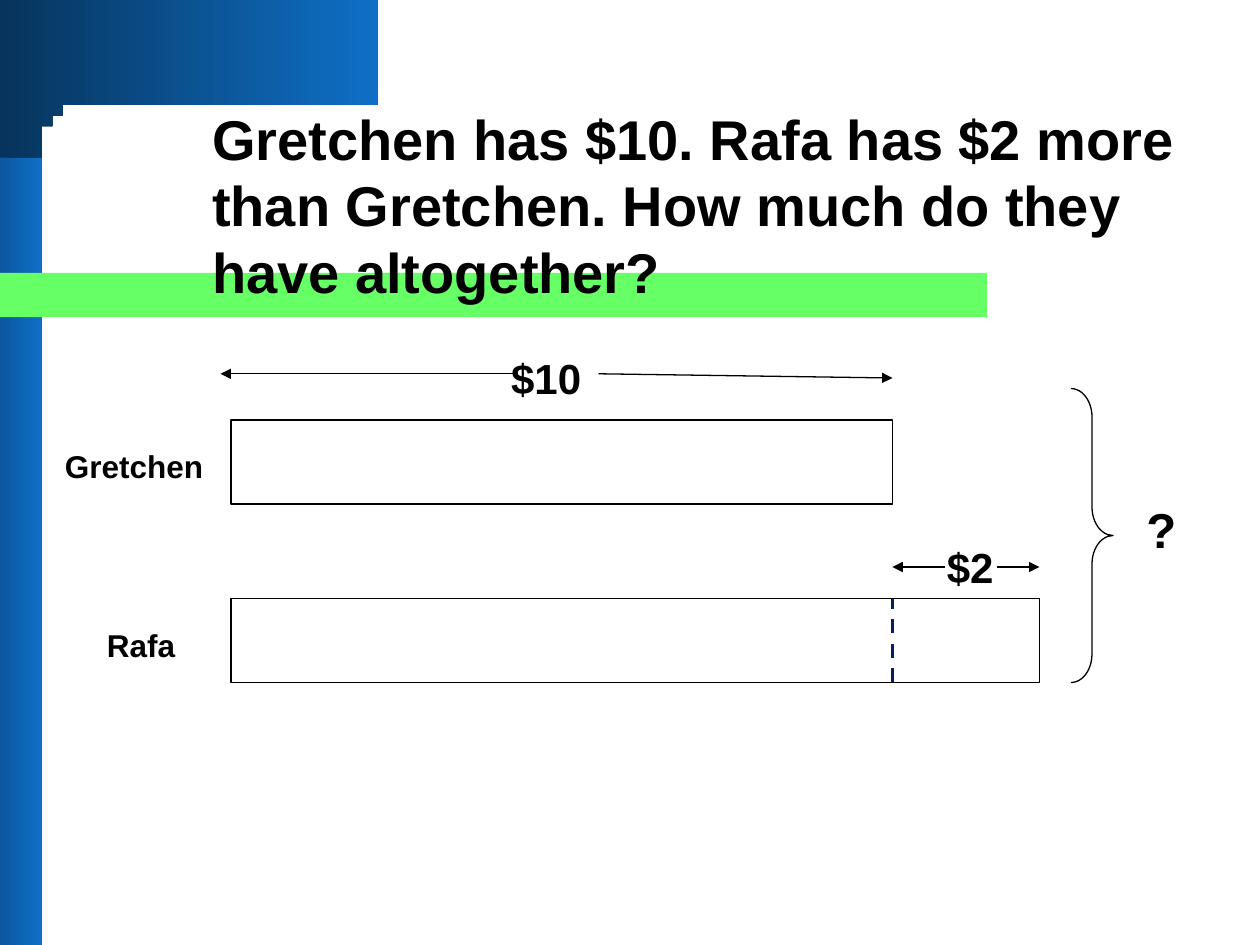
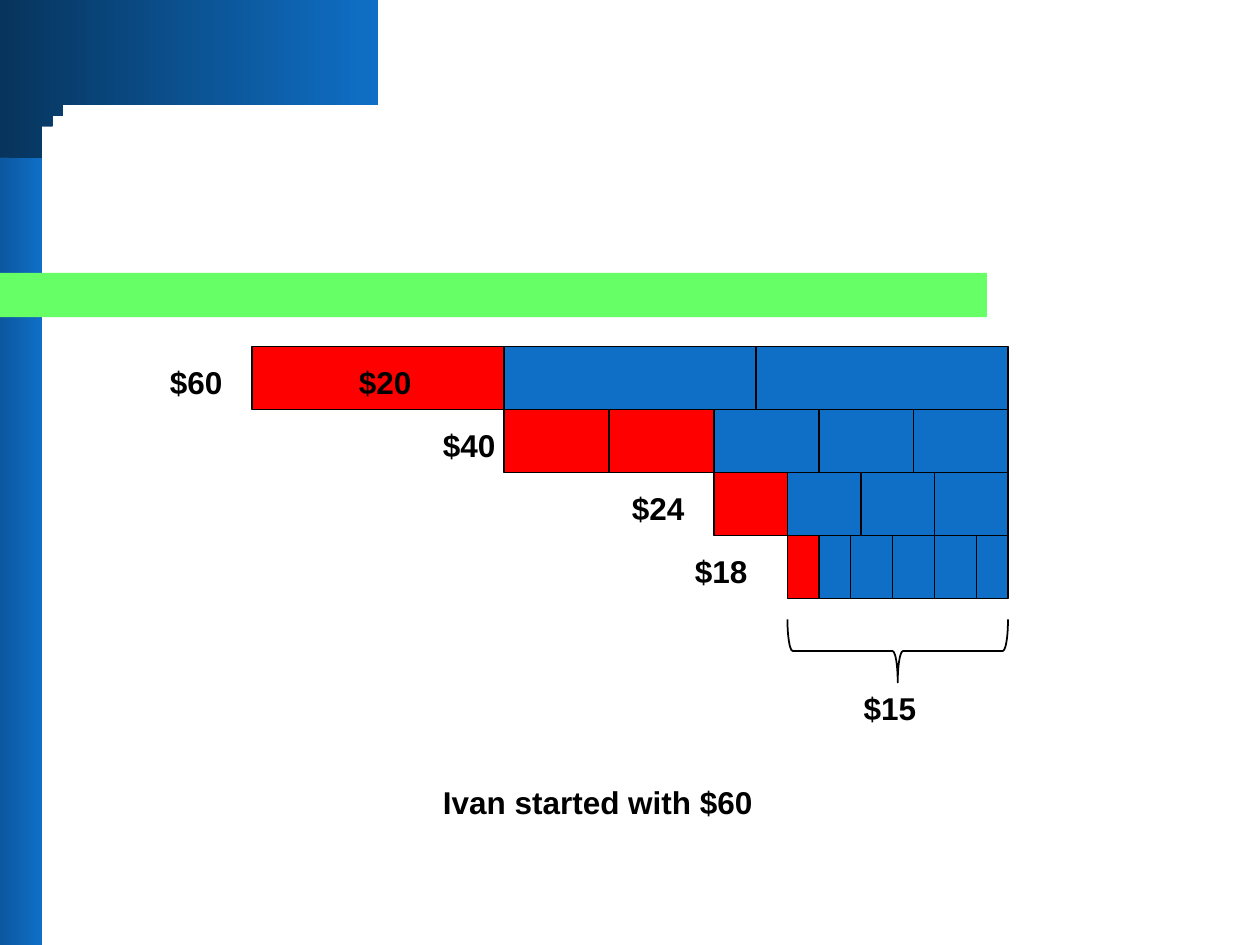
from math import cos, pi, sin

from lxml.etree import SubElement
from pptx import Presentation
from pptx.dml.color import RGBColor
from pptx.enum.dml import MSO_LINE_DASH_STYLE as Dash
from pptx.enum.shapes import MSO_CONNECTOR as Connector, MSO_SHAPE as Shape
from pptx.enum.text import MSO_ANCHOR as Anchor, PP_ALIGN as Align
from pptx.oxml.ns import qn
from pptx.util import Inches, Pt

# Grid of 120 columns by 90 rows, twelve cells to the inch
CELL = Inches(1) // 12
color = RGBColor.from_string
BLACK, BLUE, DARK_BLUE, STRIP_BLUE = "000000", "0F6FC6", "07345C", "0C57A0"
GREEN, RED, NAVY = "66FF66", "FF0000", "002060"

presentation = Presentation()
presentation.slide_width = 120 * CELL
presentation.slide_height = 90 * CELL


def add_box(slide, kind, *place, fill=None, line=BLACK, weight=0.75):
    """Add a preset shape; place is left, top, width, height in cells."""
    shape = slide.shapes.add_shape(kind, *[round(n * CELL) for n in place])
    shape.shadow.inherit = False
    if fill:
        shape.fill.solid()
        shape.fill.fore_color.rgb = color(fill)
    else:
        shape.fill.background()
    if line:
        shape.line.color.rgb = color(line)
        shape.line.width = Pt(weight)
    else:
        shape.line.fill.background()
    return shape


def add_text(slide, text, *place, size=18, align=Align.LEFT, box=None):
    """Write bold text in a new text box, or in the given box, placed in cells."""
    box = box or slide.shapes.add_textbox(0, 0, 0, 0)
    box.left, box.top, box.width, box.height = [round(n * CELL) for n in place]
    frame = box.text_frame
    frame.word_wrap = True
    paragraph = frame.paragraphs[0]
    paragraph.alignment = align
    run = paragraph.add_run()
    run.text = text
    run.font.name = "Arial"
    run.font.size = Pt(size)
    run.font.bold = True
    run.font.color.rgb = color(BLACK)
    return box


problem = presentation.slides.add_slide(presentation.slide_layouts[5])
solution = presentation.slides.add_slide(presentation.slide_layouts[6])

# Shared decoration: strip, rounded corner and band, moved to the master
strip = add_box(problem, Shape.RECTANGLE, 0, 0, 4, 90, line=None)
builder = problem.shapes.build_freeform(0, 0, scale=CELL)
arc = [(7.6 - 3.6 * sin(step * pi / 24), 14 - 4 * cos(step * pi / 24)) for step in range(13)]
builder.add_line_segments([(36, 0), (36, 10), *arc, (4, 15.4), (0, 15.4)])
corner = builder.convert_to_shape()
corner.shadow.inherit = False
corner.line.fill.background()
for shape, start in ((strip, STRIP_BLUE), (corner, DARK_BLUE)):
    shape.fill.gradient()
    shape.fill.gradient_angle = 0
    for stop, tint in zip(shape.fill.gradient_stops, (start, BLUE)):
        stop.color.rgb = color(tint)
band = add_box(problem, Shape.RECTANGLE, 0, 26, 94, 4.2, fill=GREEN, line=None)
for index, shape in enumerate((strip, corner, band)):
    shape.element.nvSpPr.cNvPr.id = 100 + index
    presentation.slide_master.shapes.element.insert(2 + index, shape.element)

# Slide 1: question
title = add_text(
    problem,
    "Gretchen has $10. Rafa has $2 more than Gretchen. How much do they have altogether?",
    19, 9, 99, 20.6, size=32, box=problem.shapes.title)
title.text_frame.vertical_anchor = Anchor.BOTTOM
title.text_frame.paragraphs[0].line_spacing = Pt(38)

# Slide 1: one bar for each person, and the brace for the total
for top, width in ((40, 63), (57, 77)):
    add_box(problem, Shape.RECTANGLE, 22, top, width, 8)
brace = add_box(problem, Shape.RIGHT_BRACE, 102, 37, 4, 28)
brace.adjustments[0] = 0.68

# Slide 1: labels
for text, left, top, width, size in (
        ("Gretchen", 5, 42, 17, 18), ("Rafa", 9, 59, 11, 18),
        ("$10", 47.5, 33, 12, 24), ("$2", 89, 51, 8, 24), ("?", 108, 47, 6, 28)):
    add_text(problem, text, left, top, width, size / 4, size=size)

# Slide 1: measuring arrows and the dashed mark where Gretchen's bar ends
for start_x, start_y, end_x, end_y, dashed in (
        (57, 35.6, 85, 36, False), (49, 35.6, 21, 35.6, False),
        (95, 54, 99, 54, False), (90, 54, 85, 54, False), (85, 65, 85, 57, True)):
    ends = [round(n * CELL) for n in (start_x, start_y, end_x, end_y)]
    connector = problem.shapes.add_connector(Connector.STRAIGHT, *ends)
    connector.line.color.rgb = color(NAVY if dashed else BLACK)
    connector.line.width = Pt(2 if dashed else 0.75)
    if dashed:
        connector.line.dash_style = Dash.DASH
    else:
        SubElement(connector.line._get_or_add_ln(), qn("a:tailEnd"), type="triangle")
    SubElement(connector.element.spPr, qn("a:effectLst"))

# Slide 2: each row splits what the row above left over; red parts are spent
left, top = 24, 33
for label, label_left, spent, widths in (
        ("$60", 15, 1, (24, 24, 24)),
        ("$40", 41, 2, (10, 10, 10, 9, 9)),
        ("$24", 59, 1, (7, 7, 7, 7)),
        ("$18", 65, 1, (3, 3, 4, 4, 4, 3))):
    for index, width in enumerate(widths):
        fill = RED if index < spent else BLUE
        add_box(solution, Shape.RECTANGLE, left + sum(widths[:index]), top, width, 6, fill=fill)
    add_text(solution, label, label_left, top + 1, 8, 4.8)
    left += sum(widths[:spent])
    top += 6
add_text(solution, "$20", 33, 34, 8, 4.8)

# Slide 2: remainder and answer
brace = add_box(solution, Shape.LEFT_BRACE, 82.5, 51.5, 6, 21, weight=1)
brace.rotation = 270
add_text(solution, "$15", 75, 65, 19.5, 4.8, align=Align.CENTER)
add_text(solution, "Ivan started with $60", 41, 74, 36, 4.8)

presentation.save("out.pptx")
